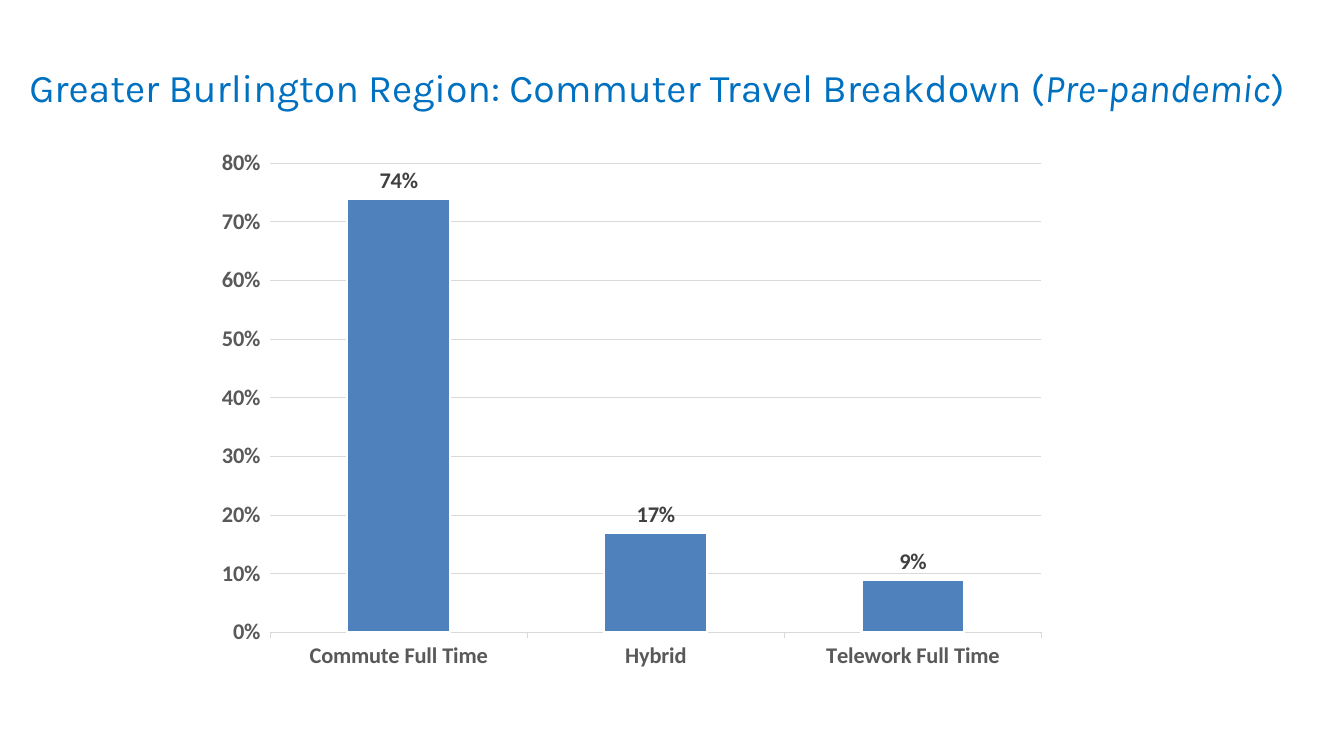
from pptx import Presentation
from pptx.chart.data import CategoryChartData as ChartData
from pptx.dml.color import RGBColor
from pptx.enum.chart import XL_CHART_TYPE as ChartType
from pptx.enum.chart import XL_LABEL_POSITION as LabelPosition
from pptx.enum.chart import XL_TICK_MARK as TickMark
from pptx.enum.text import MSO_ANCHOR as Anchor
from pptx.enum.text import MSO_AUTO_SIZE as AutoSize
from pptx.enum.text import PP_ALIGN as Align
from pptx.oxml import parse_xml
from pptx.oxml.ns import nsdecls, qn
from pptx.util import Inches, Pt

TITLE_BLUE = RGBColor(0x00, 0x70, 0xC0)
BAR_BLUE = RGBColor(0x4F, 0x81, 0xBD)
WHITE = RGBColor(0xFF, 0xFF, 0xFF)
BLACK = RGBColor(0x00, 0x00, 0x00)
GRID_GREY = RGBColor(0xD9, 0xD9, 0xD9)
AXIS_GREY = RGBColor(0x59, 0x59, 0x59)
LABEL_GREY = RGBColor(0x40, 0x40, 0x40)

TITLE_BOX = [Inches(n) for n in (-0.5, 0.24, 13.75, 1.25)]
CHART_BOX = [Inches(n) for n in (2.17, 1.3, 8.5, 5.35)]
PLOT_SHARES = {"x": 0.06, "y": 0.06, "w": 0.9, "h": 0.87}

TITLE_FONT = {"name": "Karla", "size": Pt(28)}
CHART_FONT = {"name": "Calibri", "size": Pt(10)}
BOLD_FONT = {"name": "Calibri", "size": Pt(16), "bold": True}

TITLE_SPANS = [
    ("Greater Burlington Region: Commuter Travel Breakdown (", False),
    ("Pre-pandemic", True),
    (")", False),
]
COMMUTER_SHARES = {"Commute Full Time": 0.74, "Hybrid": 0.17, "Telework Full Time": 0.09}


def apply(target, values):
    for name, value in values.items():
        setattr(target, name, value)


def style_font(font, values, color):
    apply(font, values)
    font.color.rgb = color


def style_line(line, color, width):
    line.color.rgb = color
    line.width = Pt(width)


def add_title(page, box):
    title = page.shapes.title
    apply(title, dict(zip(("left", "top", "width", "height"), box)))
    apply(title.text_frame, {
        "word_wrap": True,
        "auto_size": AutoSize.NONE,
        "vertical_anchor": Anchor.MIDDLE,
    })
    para = title.text_frame.paragraphs[0]
    para.alignment = Align.LEFT
    properties = para._p.get_or_add_pPr()
    properties.set("marL", str(Inches(0.69)))
    properties.set("indent", "0")
    for text, italic in TITLE_SPANS:
        span = para.add_run()
        span.text = text
        style_font(span.font, {**TITLE_FONT, "italic": italic}, TITLE_BLUE)


def place_plot(chart, shares):
    area = chart._chartSpace.chart.plotArea
    for layout in area.findall(qn("c:layout")):
        area.remove(layout)
    modes = "".join(f'<c:{side}Mode val="edge"/>' for side in "xy")
    sizes = "".join(f'<c:{side} val="{share}"/>' for side, share in shares.items())
    area.insert(0, parse_xml(
        f'<c:layout {nsdecls("c")}><c:manualLayout><c:layoutTarget val="inner"/>'
        f"{modes}{sizes}</c:manualLayout></c:layout>"
    ))


def style_axes(chart):
    for axis in (chart.category_axis, chart.value_axis):
        axis.major_tick_mark = TickMark.OUTSIDE
        style_font(axis.tick_labels.font, BOLD_FONT, AXIS_GREY)
    style_line(chart.category_axis.format.line, GRID_GREY, 0.75)
    values = chart.value_axis
    apply(values, {"minimum_scale": 0, "maximum_scale": 0.8, "major_unit": 0.1})
    apply(values.tick_labels, {"number_format": "0%", "number_format_is_linked": False})
    values.format.line.fill.background()
    style_line(values.major_gridlines.format.line, GRID_GREY, 0.75)


def style_bars(plot):
    apply(plot, {"gap_width": 150, "vary_by_categories": False})
    bars = plot.series[0]
    bars.format.fill.solid()
    bars.format.fill.fore_color.rgb = BAR_BLUE
    style_line(bars.format.line, WHITE, 1.5)
    labels = bars.data_labels
    apply(labels, {
        "show_value": True,
        "number_format": "0%",
        "number_format_is_linked": False,
        "position": LabelPosition.OUTSIDE_END,
    })
    style_font(labels.font, BOLD_FONT, LABEL_GREY)


def add_commuter_chart(page, box):
    data = ChartData(number_format="0%")
    data.categories = list(COMMUTER_SHARES)
    data.add_series("Series 1", list(COMMUTER_SHARES.values()))
    chart = page.shapes.add_chart(ChartType.COLUMN_CLUSTERED, *box, data).chart
    apply(chart, {"has_legend": False, "has_title": False})
    style_font(chart.font, CHART_FONT, BLACK)
    place_plot(chart, PLOT_SHARES)
    style_axes(chart)
    style_bars(chart.plots[0])


def main():
    deck = Presentation()
    apply(deck, {"slide_width": Inches(13.33), "slide_height": Inches(7.5)})
    page = deck.slides.add_slide(deck.slide_layouts.get_by_name("Title Only"))
    add_title(page, TITLE_BOX)
    add_commuter_chart(page, CHART_BOX)
    deck.save("out.pptx")


if __name__ == "__main__":
    main()
